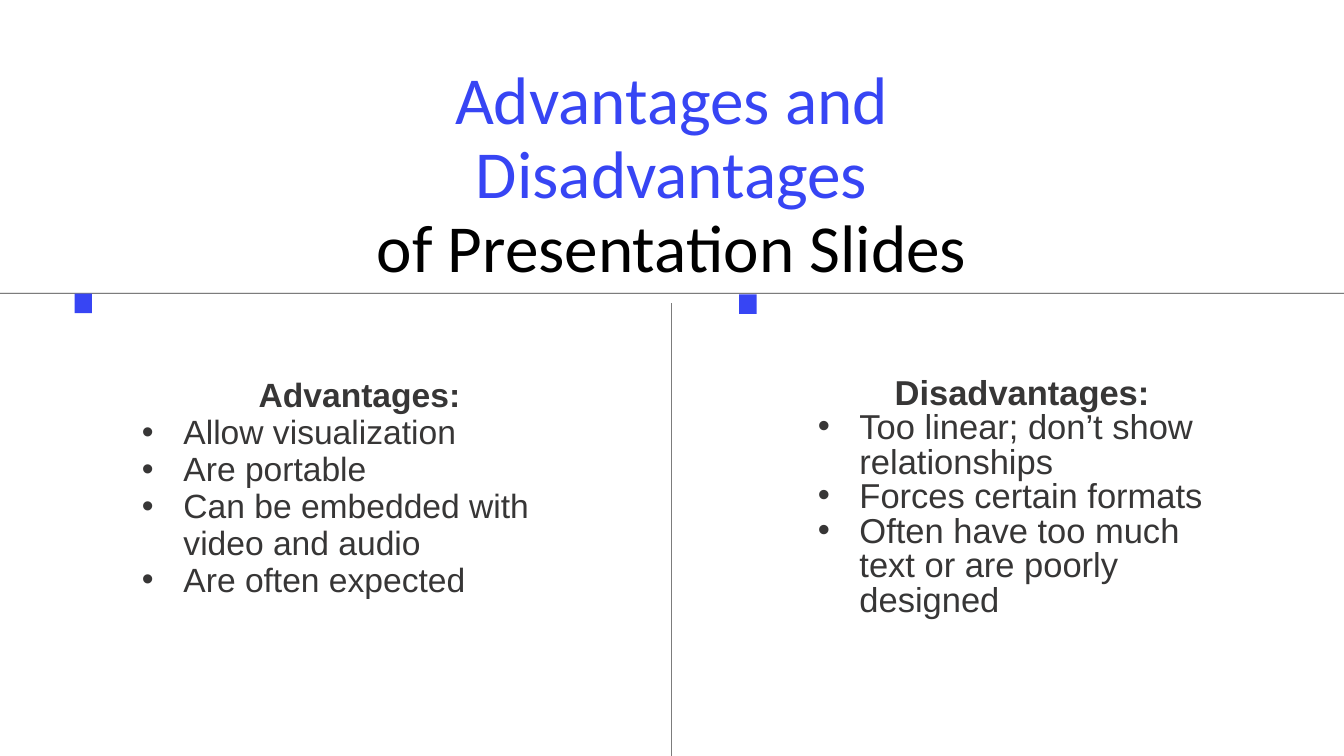
from pptx import Presentation
from pptx.dml.color import RGBColor
from pptx.enum.shapes import MSO_SHAPE as Shape
from pptx.enum.text import MSO_ANCHOR as Anchor, PP_ALIGN as Align
from pptx.oxml.ns import qn
from pptx.util import Inches, Pt
from lxml.etree import SubElement

BLUE = RGBColor(0x37, 0x45, 0xF4)
DARK = RGBColor(0x37, 0x36, 0x36)
BLACK = RGBColor(0, 0, 0)

WIDE, HIGH = 20, 11.25
HAIR = 0.01
INDENT = 0.62

PROS = ["Allow visualization", "Are portable",
        "Can be embedded with video and audio", "Are often expected"]
CONS = ["Too linear; don’t show relationships", "Forces certain formats",
        "Often have too much text or are poorly designed"]


class Deck:
    frame_style = dict(word_wrap=True, vertical_anchor=Anchor.TOP,
                       margin_left=0, margin_right=0,
                       margin_top=0, margin_bottom=0)

    def __init__(self, slide):
        self.slide = slide

    def style(self, item, values):
        for name, value in values.items():
            setattr(item, name, value)

    def rect(self, left, top, width, height, color):
        box = self.slide.shapes.add_shape(
            Shape.RECTANGLE, *map(Inches, (left, top, width, height)))
        box.shadow.inherit = False
        box.fill.solid()
        box.fill.fore_color.rgb = color
        box.line.fill.background()

    def frame(self, left, top, width, height):
        box = self.slide.shapes.add_textbox(
            *map(Inches, (left, top, width, height)))
        self.style(box.text_frame, self.frame_style)
        return box.text_frame

    def run(self, para, text, color, **font):
        run = para.add_run()
        run.text = text
        self.style(run.font, font)
        run.font.color.rgb = color

    def title(self, area, first, second):
        para = self.frame(*area).paragraphs[0]
        self.style(para, dict(alignment=Align.CENTER, line_spacing=Pt(79.2)))
        font = dict(name="Calibri", size=Pt(72))
        self.run(para, first, BLUE, **font)
        para.add_line_break()
        self.run(para, second, BLACK, **font)

    def bullet(self, para):
        props = para._p.get_or_add_pPr()
        props.set("marL", str(Inches(INDENT)))
        props.set("indent", str(-Inches(INDENT)))
        SubElement(props, qn("a:buFont"), typeface="Arial")
        SubElement(props, qn("a:buChar"), char="•")

    def column(self, area, head, items, size, pitch):
        """Add a centred bold heading with a bulleted list below it."""
        frame = self.frame(*area)
        font = dict(name="Arial", size=Pt(size))
        para = frame.paragraphs[0]
        self.style(para, dict(alignment=Align.CENTER, line_spacing=Pt(pitch)))
        self.run(para, head, DARK, bold=True, **font)
        for item in items:
            para = frame.add_paragraph()
            self.style(para, dict(alignment=Align.LEFT, line_spacing=Pt(pitch)))
            self.bullet(para)
            self.run(para, item, DARK, bold=False, **font)


def main():
    show = Presentation()
    show.slide_width, show.slide_height = Inches(WIDE), Inches(HIGH)
    deck = Deck(show.slides.add_slide(show.slide_layouts[6]))

    deck.title((3.83, 0.96, 12.33, 4.43),
               "Advantages and Disadvantages", "of Presentation Slides")
    deck.rect(0, 4.36, WIDE, HAIR, DARK)
    deck.rect(9.99, 4.51, HAIR, HIGH - 4.51, DARK)
    for left, top in ((1.11, 4.37), (11, 4.38)):
        deck.rect(left, top, 0.26, 0.29, BLUE)
    deck.column((2.11, 5.62, 6.48, 4.49), "Advantages:", PROS, 36, 39.6)
    deck.column((12.17, 5.62, 6.08, 5.19), "Disadvantages:", CONS, 37, 37)

    show.save("out.pptx")


if __name__ == "__main__":
    main()
